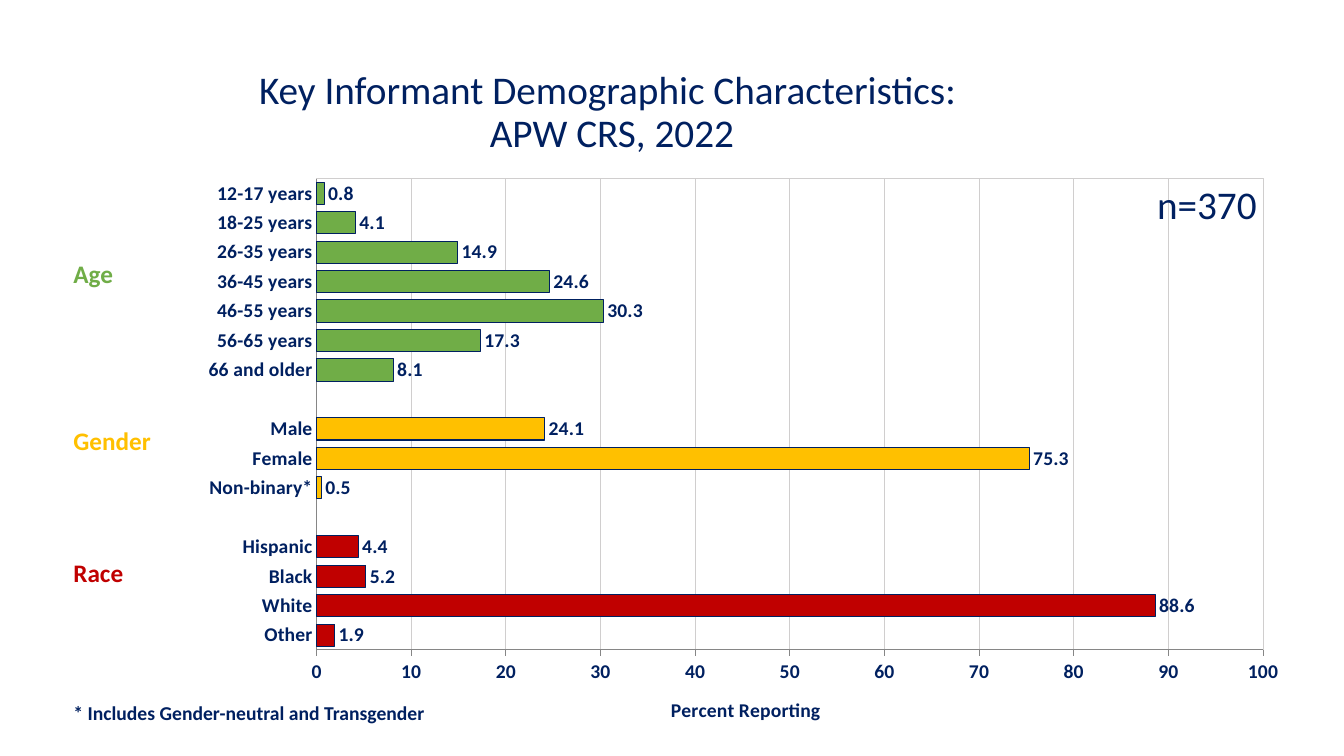
"""Build the key informant demographics slide with its grouped bar chart."""
from dataclasses import dataclass

from lxml import etree
from pptx import Presentation
from pptx.chart.data import CategoryChartData
from pptx.dml.color import RGBColor
from pptx.enum.chart import XL_CHART_TYPE, XL_LABEL_POSITION, XL_TICK_MARK
from pptx.enum.text import MSO_ANCHOR, MSO_AUTO_SIZE, PP_ALIGN
from pptx.util import Inches, Pt

BAR = XL_CHART_TYPE.BAR_CLUSTERED
OUTSIDE_END = XL_LABEL_POSITION.OUTSIDE_END
TICK_NONE, TICK_OUT = XL_TICK_MARK.NONE, XL_TICK_MARK.OUTSIDE
MIDDLE, CENTER = MSO_ANCHOR.MIDDLE, PP_ALIGN.CENTER
FIT_NONE, FIT_SHAPE = MSO_AUTO_SIZE.NONE, MSO_AUTO_SIZE.SHAPE_TO_FIT_TEXT

FONT = "Calibri"
COLORS = {"navy": "002060", "green": "70AD47", "gold": "FFC000",
          "red": "C00000", "grid": "D0CECE", "axis": "868686"}
SLIDE_W, SLIDE_H = Inches(13.33), Inches(7.5)
COLUMNS, ROWS = 40, 22.5
CHART_NS = "http://schemas.openxmlformats.org/drawingml/2006/chart"
DRAW_NS = "http://schemas.openxmlformats.org/drawingml/2006/main"


@dataclass
class Box:
    col: float
    row: float
    cols: float
    rows: float

    def emu(self) -> tuple[int, int, int, int]:
        return (round(SLIDE_W * self.col / COLUMNS), round(SLIDE_H * self.row / ROWS),
                round(SLIDE_W * self.cols / COLUMNS), round(SLIDE_H * self.rows / ROWS))


@dataclass
class Label:
    text: str
    box: Box
    size: int
    color: str
    bold: bool = True


@dataclass
class Group:
    color: str
    bars: dict[str, float]


TITLE_LINES = ("Key Informant Demographic Characteristics: ", "APW CRS, 2022")
TITLE_BOX = Box(2.76, 1.2, 30.9, 4.35)
CHART_BOX = Box(1.53, 3.84, 37.41, 17.85)
LABELS = [
    Label("Age", Box(1.89, 7.53, 1.8, 1.2), 18, "green"),
    Label("Gender", Box(1.89, 12.51, 2.94, 1.2), 18, "gold"),
    Label("Race", Box(1.89, 16.44, 2.1, 1.2), 18, "red"),
    Label("n=370", Box(34.14, 5.22, 3.6, 1.71), 28, "navy", False),
    Label("* Includes Gender-neutral and Transgender",
          Box(1.89, 20.7, 11.13, 1.02), 14, "navy"),
]
GROUPS = [
    Group("green", {"12-17 years": 0.8, "18-25 years": 4.1, "26-35 years": 14.9,
                    "36-45 years": 24.6, "46-55 years": 30.3, "56-65 years": 17.3,
                    "66 and older": 8.1}),
    Group("gold", {"Male": 24.1, "Female": 75.3, "Non-binary*": 0.5}),
    Group("red", {"Hispanic": 4.4, "Black": 5.2, "White": 88.6, "Other": 1.9}),
]


def rgb(color: str) -> RGBColor:
    return RGBColor.from_string(COLORS[color])


def set_font(font, size: int, color: str = "navy", bold: bool = True) -> None:
    font.name, font.size, font.bold = FONT, Pt(size), bold
    font.color.rgb = rgb(color)


def set_line(line, color: str) -> None:
    line.color.rgb = rgb(color)
    line.width = Pt(0.75)


def set_layout(parent, index: int, **settings) -> None:
    for old in parent.findall(f"{{{CHART_NS}}}layout"):
        parent.remove(old)
    layout = etree.Element(f"{{{CHART_NS}}}layout")
    manual = etree.SubElement(layout, f"{{{CHART_NS}}}manualLayout")
    for tag, value in settings.items():
        etree.SubElement(manual, f"{{{CHART_NS}}}{tag}", val=str(value))
    parent.insert(index, layout)


def add_border(plot_area, color: str) -> None:
    sp_pr = etree.SubElement(plot_area, f"{{{CHART_NS}}}spPr")
    etree.SubElement(sp_pr, f"{{{DRAW_NS}}}noFill")
    ln = etree.SubElement(sp_pr, f"{{{DRAW_NS}}}ln", w=str(Pt(0.75)))
    fill = etree.SubElement(ln, f"{{{DRAW_NS}}}solidFill")
    etree.SubElement(fill, f"{{{DRAW_NS}}}srgbClr", val=COLORS[color])


def add_title(slide) -> None:
    sp = slide.shapes.title
    sp.left, sp.top, sp.width, sp.height = TITLE_BOX.emu()
    tf = sp.text_frame
    tf.word_wrap, tf.auto_size, tf.vertical_anchor = True, FIT_NONE, MIDDLE
    p = tf.paragraphs[0]
    p.alignment, p.line_spacing = CENTER, 0.9
    first, second = TITLE_LINES
    p.add_run().text = first
    p.add_line_break()
    p.add_run().text = second
    set_font(p.font, 28, bold=False)


def add_label(slide, label: Label) -> None:
    tf = slide.shapes.add_textbox(*label.box.emu()).text_frame
    tf.word_wrap, tf.auto_size = False, FIT_SHAPE
    p = tf.paragraphs[0]
    p.text = label.text
    set_font(p.font, label.size, label.color, label.bold)


def format_axes(chart) -> None:
    cat, val = chart.category_axis, chart.value_axis
    for axis, tick in ((cat, TICK_NONE), (val, TICK_OUT)):
        axis.major_tick_mark, axis.minor_tick_mark = tick, TICK_NONE
        set_font(axis.tick_labels.font, 14)
        set_line(axis.format.line, "axis")
    cat.has_major_gridlines = False
    val.minimum_scale, val.maximum_scale, val.major_unit = 0, 100, 10
    val.tick_labels.number_format = "0"
    val.tick_labels.number_format_is_linked = False
    val.has_major_gridlines = True
    set_line(val.major_gridlines.format.line, "grid")
    title = val.axis_title
    p = title.text_frame.paragraphs[0]
    p.text = "Percent Reporting"
    set_font(p.font, 14)
    set_layout(title._element, 1, xMode="edge", yMode="edge", x=0.49, y=0.945)


def add_demographics_chart(slide) -> None:
    rows = []
    for group in GROUPS:
        if rows:
            rows.append(("", None, None))
        rows += [(name, value, group.color) for name, value in group.bars.items()]
    rows.reverse()

    data = CategoryChartData(number_format="0.0")
    data.categories = [name for name, _, _ in rows]
    data.add_series("Series 1", [value for _, value, _ in rows])
    chart = slide.shapes.add_chart(BAR, *CHART_BOX.emu(), data).chart
    chart.has_legend = chart.has_title = False
    chart.font.name, chart.font.size = FONT, Pt(18)

    plot = chart.plots[0]
    plot.gap_width, plot.overlap, plot.vary_by_categories = 33, 1, False
    series = plot.series[0]
    series.invert_if_negative = False
    series.format.fill.solid()
    series.format.fill.fore_color.rgb = rgb("green")
    set_line(series.format.line, "navy")
    for i, (_, _, color) in enumerate(rows):
        if color in ("gold", "red"):
            fmt = series.points[i].format
            fmt.fill.solid()
            fmt.fill.fore_color.rgb = rgb(color)
            set_line(fmt.line, "navy")

    labels = series.data_labels
    labels.show_value, labels.position = True, OUTSIDE_END
    labels.number_format, labels.number_format_is_linked = "0.0", False
    set_font(labels.font, 14)

    format_axes(chart)
    plot_area = chart._chartSpace.chart.plotArea
    set_layout(plot_area, 0, layoutTarget="inner", xMode="edge", yMode="edge",
               x=0.211, y=0.083, w=0.753, h=0.79)
    add_border(plot_area, "grid")


def main() -> None:
    prs = Presentation()
    prs.slide_width, prs.slide_height = SLIDE_W, SLIDE_H
    slide = prs.slides.add_slide(prs.slide_layouts[5])
    add_title(slide)
    add_demographics_chart(slide)
    for label in LABELS:
        add_label(slide, label)
    prs.save("out.pptx")


if __name__ == "__main__":
    main()
